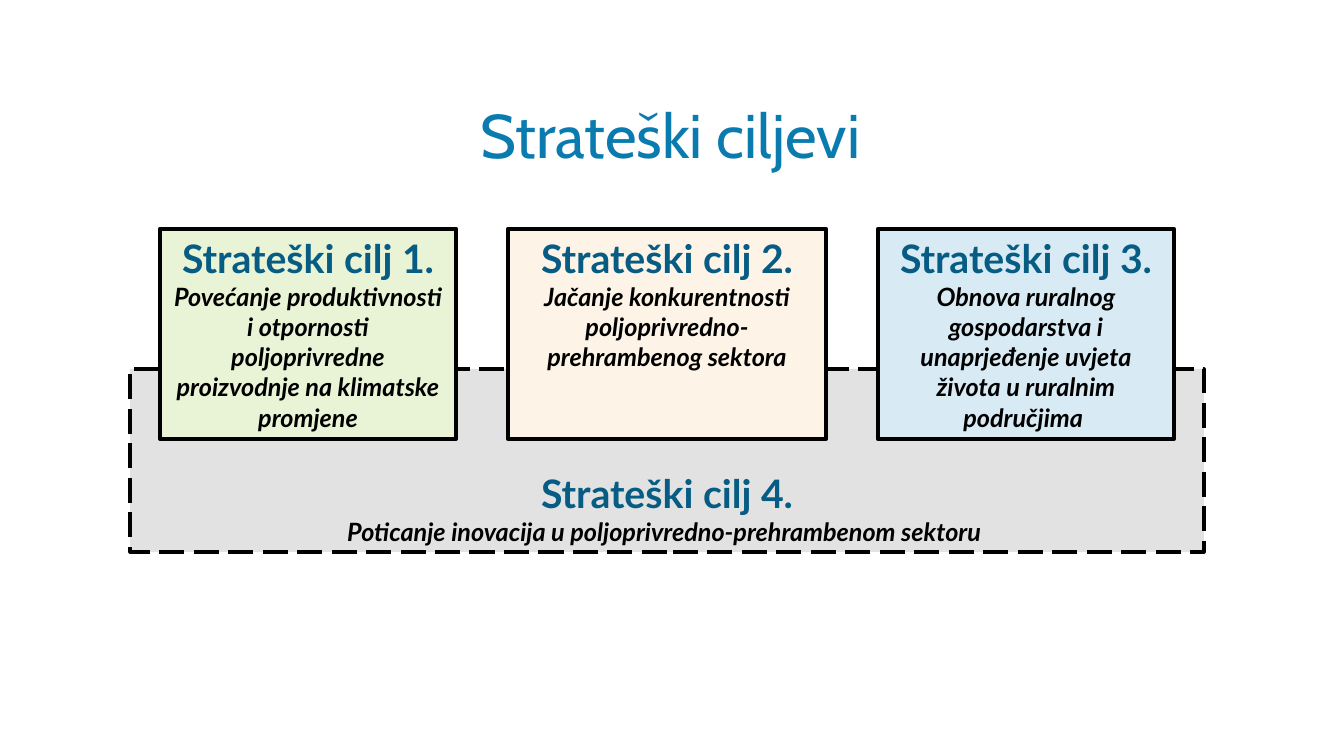
import pptx
import pptx.util
import pptx.dml.color
import pptx.enum.dml
import pptx.enum.shapes
import pptx.enum.text

TITLE = "Strateški ciljevi"
GOALS = [
    ("Strateški cilj 1.",
     "Povećanje produktivnosti i otpornosti poljoprivredne proizvodnje na klimatske promjene",
     296, "E9F3D5"),
    ("Strateški cilj 2.",
     "Jačanje konkurentnosti poljoprivredno-prehrambenog sektora",
     318, "FDF4E7"),
    ("Strateški cilj 3.",
     "Obnova ruralnog gospodarstva i unaprjeđenje uvjeta života u ruralnim područjima ",
     296, "D8EAF3"),
]
SHARED_GOAL = ("Strateški cilj 4.",
               "Poticanje inovacija u poljoprivredno-prehrambenom sektoru ")

SLIDE_W, SLIDE_H = 1344, 756
EMU_PER_PX = 12192000 / SLIDE_W
GOALS_LEFT, GOALS_TOP, GOAL_H, GOAL_GAP = 160, 229, 210, 52

ANCHOR = pptx.enum.text.MSO_ANCHOR


def px(length):
    return pptx.util.Emu(round(length * EMU_PER_PX))


def color(hex_code):
    return pptx.dml.color.RGBColor.from_string(hex_code)


def write(paragraph, text, size, font, ink, bold=False, italic=False, spacing=1.0):
    paragraph.alignment = pptx.enum.text.PP_ALIGN.CENTER
    paragraph.line_spacing = spacing
    run = paragraph.add_run()
    run.text = text
    run.font.size = pptx.util.Pt(size)
    run.font.name = font
    run.font.bold = bold
    run.font.italic = italic
    run.font.color.rgb = color(ink)


def add_goal(slide, place, heading, aim, fill, line_width, anchor, dash=None):
    goal = slide.shapes.add_shape(
        pptx.enum.shapes.MSO_SHAPE.RECTANGLE, *map(px, place))
    goal.shadow.inherit = False
    goal.fill.solid()
    goal.fill.fore_color.rgb = color(fill)
    goal.line.color.rgb = color("000000")
    goal.line.width = pptx.util.Pt(line_width)
    if dash:
        goal.line.dash_style = dash
    frame = goal.text_frame
    frame.word_wrap = True
    frame.vertical_anchor = anchor
    write(frame.paragraphs[0], heading, size=28, font="Lato", ink="075C83", bold=True)
    write(frame.add_paragraph(), aim, size=18, font="Lato", ink="000000",
          bold=True, italic=True)


def main():
    deck = pptx.Presentation()
    deck.slide_width, deck.slide_height = px(SLIDE_W), px(SLIDE_H)
    slide = deck.slides.add_slide(deck.slide_layouts[6])

    add_goal(slide, (130, 369, 1074, 183), *SHARED_GOAL, "E2E2E3", 2.25,
             ANCHOR.BOTTOM, pptx.enum.dml.MSO_LINE.LONG_DASH)

    title = slide.shapes.add_textbox(*map(px, (91, 100, 1159, 120))).text_frame
    title.word_wrap = True
    title.vertical_anchor = ANCHOR.TOP
    write(title.paragraphs[0], TITLE, size=44, font="Cabin", ink="097BAF", spacing=0.9)

    left = GOALS_LEFT
    for heading, aim, width, fill in GOALS:
        add_goal(slide, (left, GOALS_TOP, width, GOAL_H), heading, aim, fill, 3, ANCHOR.TOP)
        left += width + GOAL_GAP

    deck.save("out.pptx")


if __name__ == "__main__":
    main()
